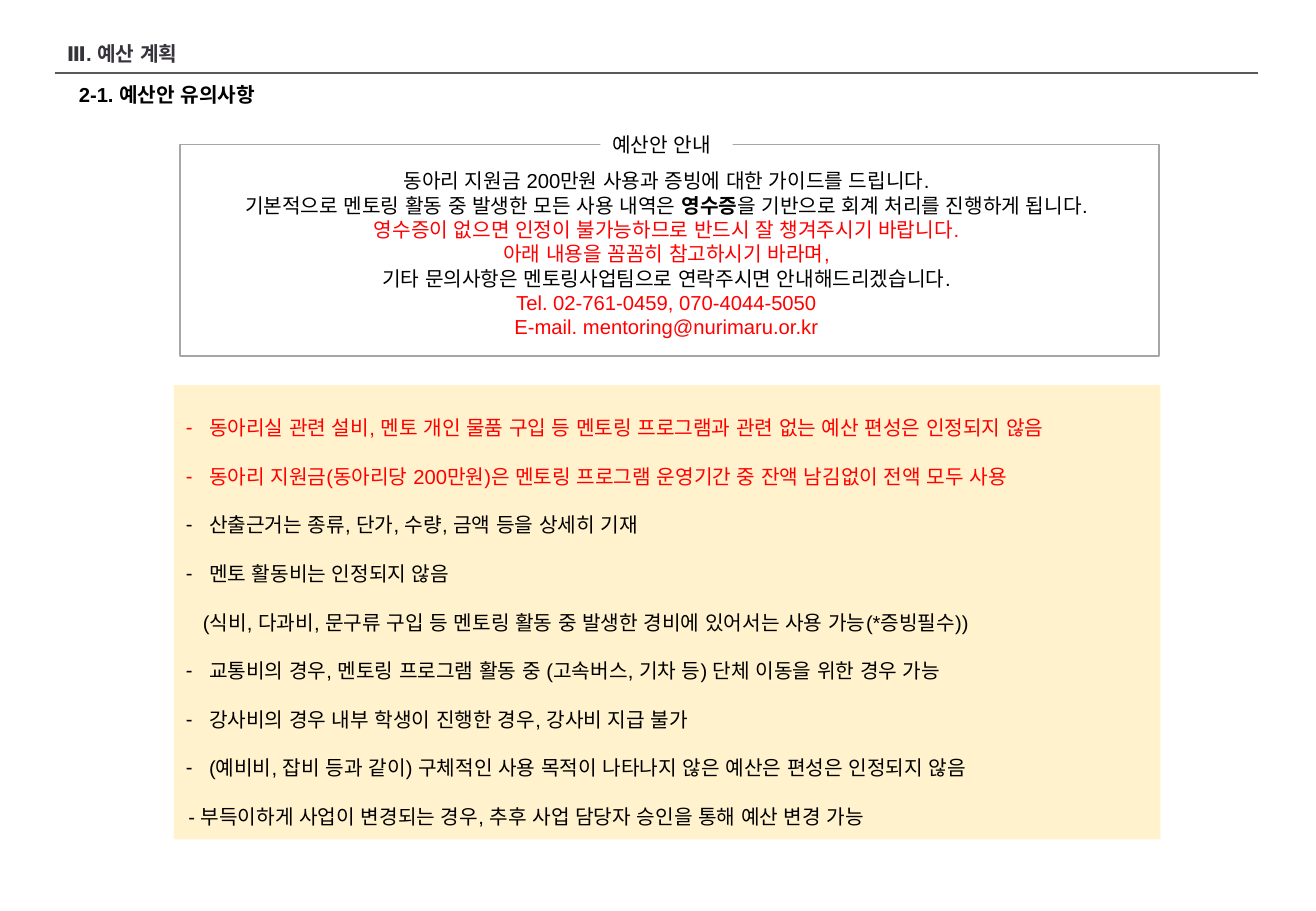
from lxml.etree import SubElement
from pptx import Presentation
from pptx.dml.color import RGBColor
from pptx.enum.shapes import MSO_CONNECTOR, MSO_SHAPE
from pptx.enum.text import MSO_ANCHOR, MSO_AUTO_SIZE, PP_ALIGN
from pptx.oxml.ns import qn
from pptx.util import Inches, Pt

FONT = "Arial"
COLORS = {"black": "000000", "red": "FF0000", "heading": "36333A", "rule": "595959",
          "frame": "A6A6A6", "cream": "FFF2CC", "white": "FFFFFF"}

HEADING = "Ⅲ. 예산 계획"
SUBHEADING = "2-1. 예산안 유의사항"
GUIDE_LABEL = "예산안 안내"
# Each line: color, then its text; ** surrounds bold words
GUIDE = [
    ("black", "동아리 지원금 200만원 사용과 증빙에 대한 가이드를 드립니다."),
    ("black", "기본적으로 멘토링 활동 중 발생한 모든 사용 내역은 **영수증**을 기반으로 회계 처리를 진행하게 됩니다."),
    ("red", "영수증이 없으면 인정이 불가능하므로 반드시 잘 챙겨주시기 바랍니다."),
    ("red", "아래 내용을 꼼꼼히 참고하시기 바라며,"),
    ("black", "기타 문의사항은 멘토링사업팀으로 연락주시면 안내해드리겠습니다."),
    ("red", "Tel. 02-761-0459, 070-4044-5050"),
    ("red", "E-mail. mentoring@nurimaru.or.kr"),
]
# Each rule: color, text, left margin, whether it has a dash bullet
RULES = [
    ("red", "동아리실 관련 설비, 멘토 개인 물품 구입 등 멘토링 프로그램과 관련 없는 예산 편성은 인정되지 않음", 0.19, True),
    ("red", "동아리 지원금(동아리당 200만원)은 멘토링 프로그램 운영기간 중 잔액 남김없이 전액 모두 사용", 0.19, True),
    ("black", "산출근거는 종류, 단가, 수량, 금액 등을 상세히 기재", 0.19, True),
    ("black", "멘토 활동비는 인정되지 않음", 0.19, True),
    ("black", "(식비, 다과비, 문구류 구입 등 멘토링 활동 중 발생한 경비에 있어서는 사용 가능(*증빙필수))", 0.14, False),
    ("black", "교통비의 경우, 멘토링 프로그램 활동 중 (고속버스, 기차 등) 단체 이동을 위한 경우 가능", 0.19, True),
    ("black", "강사비의 경우 내부 학생이 진행한 경우, 강사비 지급 불가", 0.19, True),
    ("black", "(예비비, 잡비 등과 같이) 구체적인 사용 목적이 나타나지 않은 예산은 편성은 인정되지 않음", 0.19, True),
    ("black", "- 부득이하게 사업이 변경되는 경우, 추후 사업 담당자 승인을 통해 예산 변경 가능", 0.02, False),
]


def rgb(name):
    return RGBColor.from_string(COLORS[name])


def place(shape, left, top, width, height):
    shape.left, shape.top = Inches(left), Inches(top)
    shape.width, shape.height = Inches(width), Inches(height)


def write(shape, lines, bold=False, align=PP_ALIGN.LEFT, anchor=MSO_ANCHOR.TOP,
          spacing=1.0, before=0, wrap=True):
    """Fill a shape with (color, text) lines and return the paragraphs."""
    frame = shape.text_frame
    frame.word_wrap = wrap
    frame.auto_size = MSO_AUTO_SIZE.NONE
    frame.vertical_anchor = anchor
    for number, (color, text) in enumerate(lines):
        paragraph = frame.add_paragraph() if number else frame.paragraphs[0]
        paragraph.alignment = align
        paragraph.line_spacing = spacing
        paragraph.space_before = Pt(before)
        for part, words in enumerate(text.split("**")):
            run = paragraph.add_run()
            run.text = words
            run.font.size = Pt(12)
            run.font.name = FONT
            run.font.bold = bold or part % 2 == 1
            run.font.color.rgb = rgb(color)
            SubElement(run.font._element, qn("a:ea")).set("typeface", FONT)
    return frame.paragraphs


def indent(paragraph, margin, bulleted):
    properties = paragraph._p.get_or_add_pPr()
    properties.set("marL", str(Inches(margin)))
    properties.set("indent", str(-Inches(margin) if bulleted else 0))
    if bulleted:
        SubElement(properties, qn("a:buFont")).set("typeface", FONT)
        SubElement(properties, qn("a:buChar")).set("char", "-")
    else:
        SubElement(properties, qn("a:buNone"))


def add_rectangle(slide, *box):
    rectangle = slide.shapes.add_shape(MSO_SHAPE.RECTANGLE, *map(Inches, box))
    rectangle.shadow.inherit = False
    return rectangle


def main():
    deck = Presentation()
    deck.slide_width, deck.slide_height = Inches(10.83), Inches(7.5)
    slide = deck.slides.add_slide(deck.slide_layouts[1])

    title, rules = slide.placeholders
    place(title, 0.45, 0.21, 1.54, 0.38)
    write(title, [("heading", HEADING)], bold=True, anchor=MSO_ANCHOR.BOTTOM, spacing=0.9)

    place(rules, 1.43, 3.17, 8.12, 3.74)
    rules.fill.solid()
    rules.fill.fore_color.rgb = rgb("cream")
    paragraphs = write(rules, [rule[:2] for rule in RULES], align=PP_ALIGN.JUSTIFY, spacing=2.0)
    for paragraph, (_, _, margin, bulleted) in zip(paragraphs, RULES):
        indent(paragraph, margin, bulleted)

    divider = slide.shapes.add_connector(
        MSO_CONNECTOR.STRAIGHT, Inches(0.45), Inches(0.6), Inches(10.35), Inches(0.6))
    divider.line.color.rgb = rgb("rule")
    divider.line.width = Pt(1.5)
    SubElement(divider._element.spPr, qn("a:effectLst"))

    subheading = slide.shapes.add_textbox(Inches(0.55), Inches(0.65), Inches(3.75), Inches(0.32))
    write(subheading, [("black", SUBHEADING)], bold=True, spacing=0.9, before=10)

    guide = slide.shapes.add_textbox(Inches(1.56), Inches(1.34), Inches(7.85), Inches(1.51))
    write(guide, GUIDE, align=PP_ALIGN.CENTER)

    guide_frame = add_rectangle(slide, 1.48, 1.19, 8.06, 1.74)
    guide_frame.fill.background()
    guide_frame.line.color.rgb = rgb("frame")
    guide_frame.line.width = Pt(1)

    guide_label = add_rectangle(slide, 4.94, 1.04, 1.09, 0.3)
    guide_label.fill.solid()
    guide_label.fill.fore_color.rgb = rgb("white")
    guide_label.line.fill.background()
    write(guide_label, [("black", GUIDE_LABEL)], wrap=False)

    deck.save("out.pptx")


if __name__ == "__main__":
    main()
